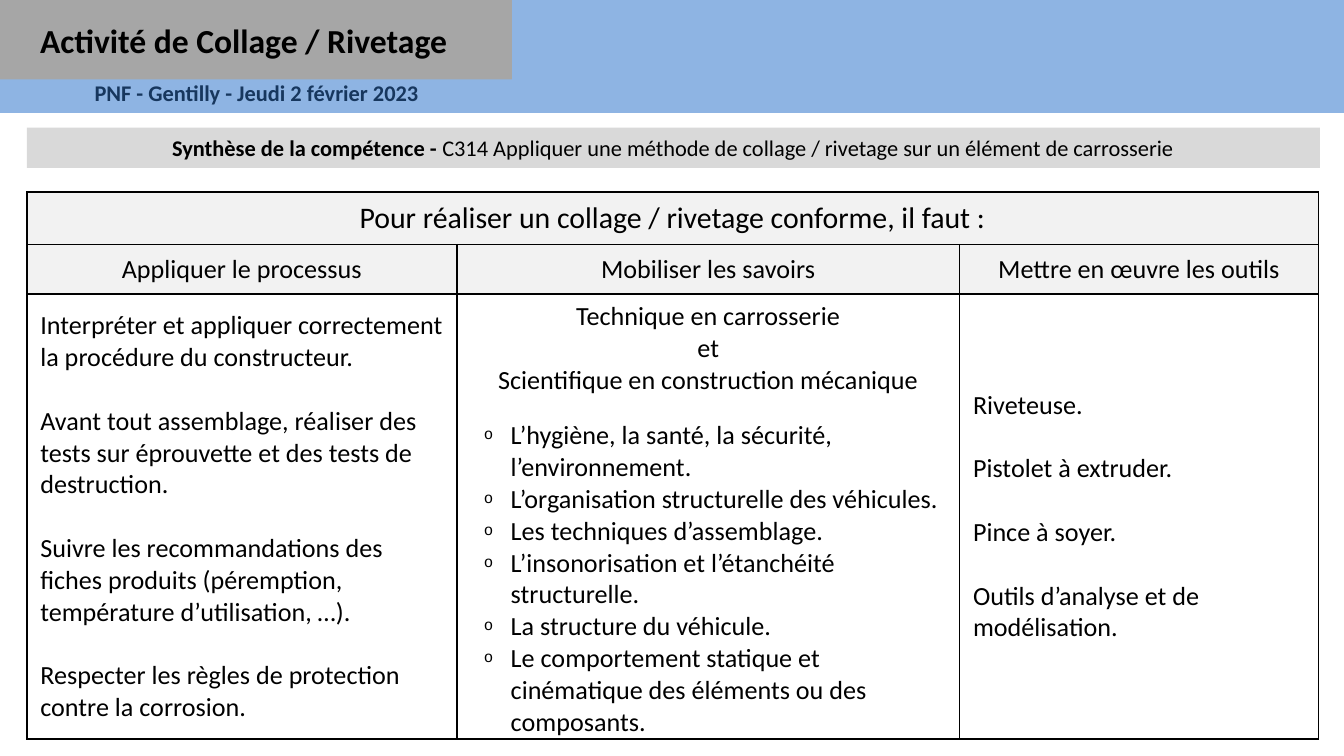
from lxml import etree
from pptx import Presentation
from pptx import util as u
from pptx.dml.color import RGBColor
from pptx.enum import shapes, text
from pptx.oxml.ns import qn

C = {"blue": "8EB4E3", "grey": "A6A6A6", "navy": "17375E", "band": "D9D9D9",
     "header": "F2F2F2", "black": "000000"}
ALIGN = text.PP_ALIGN
MIDDLE = text.MSO_ANCHOR.MIDDLE

# 16:9 slide
prs = Presentation()
prs.slide_width, prs.slide_height = u.Inches(10), u.Inches(10 * 9 / 16)
s = prs.slides.add_slide(prs.slide_layouts[6])


def rect(x, y, w, h, color):
    sp = s.shapes.add_shape(shapes.MSO_SHAPE.RECTANGLE, *map(u.Inches, (x, y, w, h)))
    sp.shadow.inherit = False
    sp.fill.solid()
    sp.fill.fore_color.rgb = RGBColor.from_string(C[color])
    sp.line.fill.background()
    return sp


def style(p, size, bold=False, color="black", align=ALIGN.LEFT):
    p.alignment = align
    for r in p.runs:
        r.font.name, r.font.size, r.font.bold = "Calibri", u.Pt(size), bold
        r.font.color.rgb = RGBColor.from_string(C[color])


# Top banner
rect(0, 0, 10, 0.84, "blue")
rect(0, 0, 3.81, 0.59, "grey")

# Event and title
for words, box, size, color, align, wrap in [
    ("PNF - Gentilly - Jeudi 2 février 2023", (0, 0.54, 3.82, 0.3), 12, "navy", ALIGN.CENTER, True),
    ("Activité de Collage / Rivetage", (0.2, 0.1, 3.26, 0.4), 18, "black", ALIGN.LEFT, False),
]:
    tf = s.shapes.add_textbox(*map(u.Inches, box)).text_frame
    tf.word_wrap = wrap
    tf.text = words
    style(tf.paragraphs[0], size, True, color, align)

# Skill band
tf = rect(0.2, 0.95, 9.62, 0.3, "band").text_frame
tf.vertical_anchor = MIDDLE
p = tf.paragraphs[0]
for words in ("Synthèse de la compétence - ",
              "C314 Appliquer une méthode de collage / rivetage sur un élément de carrosserie"):
    p.add_run().text = words
style(p, 12, align=ALIGN.CENTER)
p.runs[0].font.bold = True

# Table grid
cols, rows = [3.2, 3.74, 2.67], [0.39, 0.37, 3.31]
tbl = s.shapes.add_table(3, 3, u.Inches(0.2), u.Inches(1.43),
                         u.Inches(sum(cols)), u.Inches(sum(rows))).table
tbl.first_row = tbl.horz_banding = False
for col, w in zip(tbl.columns, cols):
    col.width = u.Inches(w)
for row, h in zip(tbl.rows, rows):
    row.height = u.Inches(h)
tbl.cell(0, 0).merge(tbl.cell(0, 2))

# Cell borders and fills
for i, row in enumerate(tbl.rows):
    for cell in row.cells:
        cell.vertical_anchor = MIDDLE
        cell.margin_top = cell.margin_bottom = u.Inches(0.02)
        tcPr = cell._tc.get_or_add_tcPr()
        for side in "LRTB":
            ln = etree.SubElement(tcPr, qn("a:ln" + side), w=str(u.Pt(1)))
            fill = etree.SubElement(ln, qn("a:solidFill"))
            etree.SubElement(fill, qn("a:srgbClr"), val=C["black"])
        if i < 2:
            cell.fill.solid()
            cell.fill.fore_color.rgb = RGBColor.from_string(C["header"])
        else:
            cell.fill.background()

# Header rows
headers = [(0, 0, "Pour réaliser un collage / rivetage conforme, il faut :", 16),
           (1, 0, "Appliquer le processus", 14),
           (1, 1, "Mobiliser les savoirs", 14),
           (1, 2, "Mettre en œuvre les outils", 14)]
for i, j, words, size in headers:
    cell = tbl.cell(i, j)
    cell.text = words
    style(cell.text_frame.paragraphs[0], size, align=ALIGN.CENTER)

# Process and tools: paragraphs one line apart
spaced = {
    0: ["Interpréter et appliquer correctement la procédure du constructeur.",
        "Avant tout assemblage, réaliser des tests sur éprouvette et des tests de destruction.",
        "Suivre les recommandations des fiches produits (péremption, température d’utilisation, …).",
        "Respecter les règles de protection contre la corrosion."],
    2: ["Riveteuse.", "Pistolet à extruder.", "Pince à soyer.",
        "Outils d’analyse et de modélisation."],
}
for j, lines in spaced.items():
    tf = tbl.cell(2, j).text_frame
    tf.text = "\n".join(lines)
    for k, p in enumerate(tf.paragraphs):
        style(p, 14)
        if k:
            p.space_before = u.Pt(17)

# Knowledge: centred heading, then bullets
heading = ["Technique en carrosserie", "et", "Scientifique en construction mécanique"]
topics = ["L’hygiène, la santé, la sécurité, l’environnement.",
          "L’organisation structurelle des véhicules.",
          "Les techniques d’assemblage.",
          "L’insonorisation et l’étanchéité structurelle.",
          "La structure du véhicule.",
          "Le comportement statique et cinématique des éléments ou des composants."]
cell = tbl.cell(2, 1)
cell.margin_top, cell.margin_bottom = u.Inches(0.04), 0
tf = cell.text_frame
tf.text = "\n".join(heading + topics)
for k, p in enumerate(tf.paragraphs):
    if k < len(heading):
        style(p, 14, align=ALIGN.CENTER)
        continue
    style(p, 14)
    if k == len(heading):
        p.space_before = u.Pt(12.8)
    pPr = p._p.get_or_add_pPr()
    pPr.set("marL", str(u.Inches(0.3)))
    pPr.set("indent", str(u.Inches(-0.2)))
    etree.SubElement(pPr, qn("a:buSzPct"), val="60000")
    etree.SubElement(pPr, qn("a:buFont"), typeface="Courier New")
    etree.SubElement(pPr, qn("a:buChar"), char="o")

prs.save("out.pptx")
